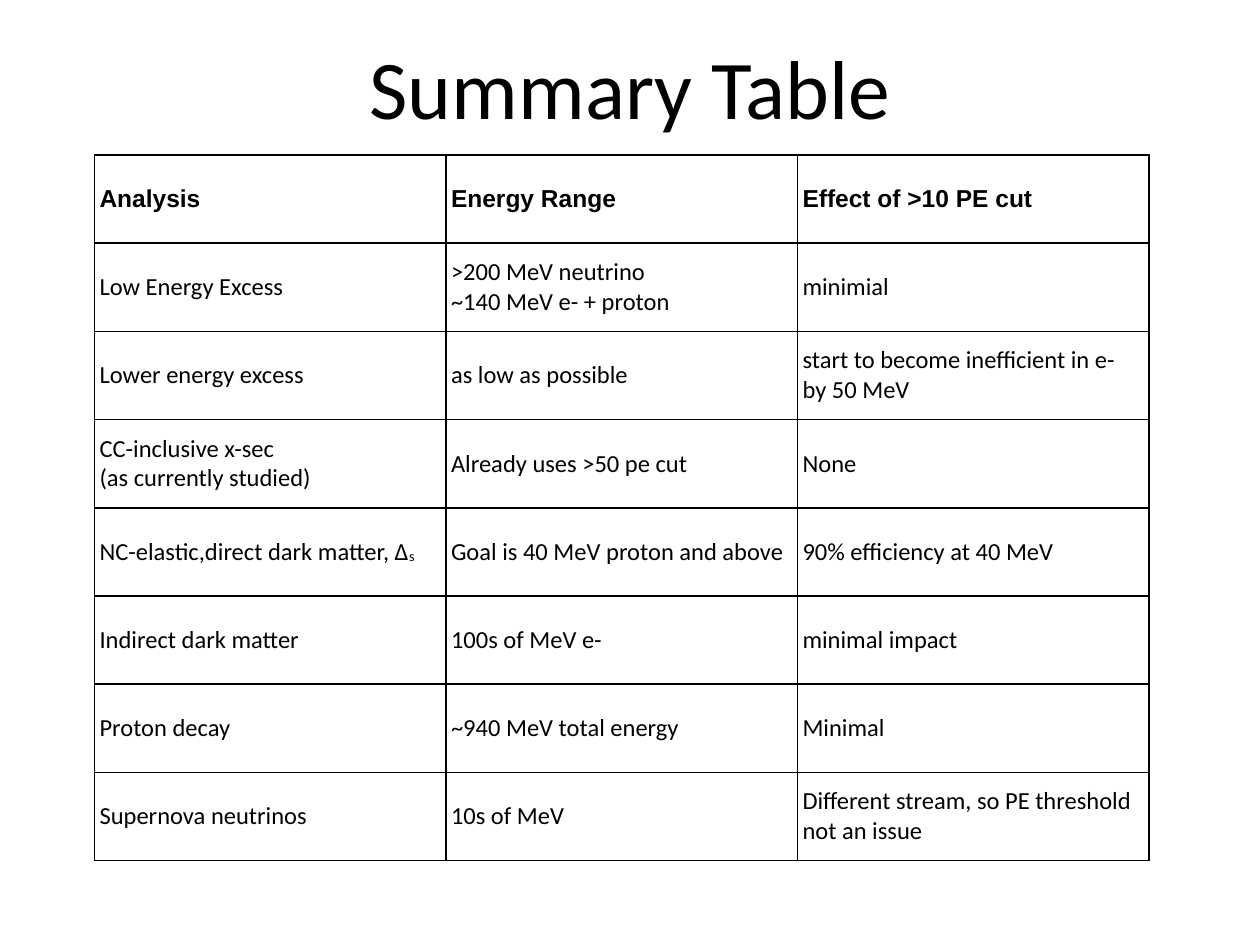
from lxml import etree
from pptx import Presentation
from pptx import util as u
from pptx.dml.color import RGBColor
from pptx.enum import text
from pptx.oxml import ns

BLACK = RGBColor(0x00, 0x00, 0x00)

HEADINGS = ("Analysis", "Energy Range", "Effect of >10 PE cut")
ANALYSES = (
    ("Low Energy Excess", ">200 MeV neutrino\n~140 MeV e- + proton", "minimial"),
    ("Lower energy excess", "as low as possible",
     "start to become inefficient in e- by 50 MeV"),
    ("CC-inclusive x-sec\n(as currently studied)", "Already uses >50 pe cut", "None"),
    ("NC-elastic,direct dark matter, ∆", "Goal is 40 MeV proton and above",
     "90% efficiency at 40 MeV"),
    ("Indirect dark matter", "100s of MeV e-", "minimal impact"),
    ("Proton decay", "~940 MeV total energy", "Minimal"),
    ("Supernova neutrinos", "10s of MeV",
     "Different stream, so PE threshold not an issue"),
)
DARK_MATTER_ROW = 4


class SummarySlide:
    """Holds the style and the slide, and adds each kind of element."""

    heading_font = "Arial"
    body_font = "Calibri"
    title_size = u.Pt(47.7)
    cell_size = u.Pt(14)
    cell_margin = u.Inches(0.04)
    border_width = u.Pt(1)

    def __init__(self, presentation):
        self.slide = presentation.slides.add_slide(presentation.slide_layouts[5])

    def style_run(self, run, font_name, size, bold=False):
        run.font.name = font_name
        run.font.size = size
        run.font.bold = bold
        run.font.color.rgb = BLACK

    def add_title(self, wording, left, top, width, height):
        title = self.slide.shapes.title
        title.left, title.top = u.Inches(left), u.Inches(top)
        title.width, title.height = u.Inches(width), u.Inches(height)
        frame = title.text_frame
        frame.text = wording
        frame.auto_size = text.MSO_AUTO_SIZE.NONE
        frame.vertical_anchor = text.MSO_ANCHOR.MIDDLE
        frame.margin_left = frame.margin_right = u.Inches(0.1)
        frame.margin_top = frame.margin_bottom = u.Inches(0.1)
        heading = frame.paragraphs[0]
        heading.alignment = text.PP_ALIGN.CENTER
        self.style_run(heading.runs[0], self.body_font, self.title_size)

    def add_borders(self, cell):
        properties = cell._tc.get_or_add_tcPr()
        for side in ("lnL", "lnR", "lnT", "lnB"):
            line = etree.SubElement(properties, ns.qn(f"a:{side}"),
                                    w=str(self.border_width))
            fill = etree.SubElement(line, ns.qn("a:solidFill"))
            etree.SubElement(fill, ns.qn("a:srgbClr"), val=str(BLACK))

    def fill_cell(self, cell, wording, heading):
        self.add_borders(cell)
        cell.fill.background()
        cell.vertical_anchor = text.MSO_ANCHOR.MIDDLE
        cell.margin_left = cell.margin_right = self.cell_margin
        cell.margin_top = cell.margin_bottom = self.cell_margin
        paragraph = cell.text_frame.paragraphs[0]
        paragraph.text = wording
        font_name = self.heading_font if heading else self.body_font
        for run in paragraph.runs:
            self.style_run(run, font_name, self.cell_size, bold=heading)
        for line_break in paragraph._p.findall(ns.qn("a:br")):
            etree.SubElement(line_break, ns.qn("a:rPr"),
                             sz=str(self.cell_size.centipoints))

    def add_subscript(self, cell, wording):
        subscript = cell.text_frame.paragraphs[0].add_run()
        subscript.text = wording
        self.style_run(subscript, self.body_font, self.cell_size)
        subscript.font._element.set("baseline", "-6000")

    def add_table(self, rows, left, top, column_width, row_height):
        columns = len(rows[0])
        table = self.slide.shapes.add_table(
            len(rows), columns, u.Inches(left), u.Inches(top),
            u.Inches(column_width * columns), u.Inches(row_height * len(rows))).table
        table.first_row = table.horz_banding = False
        for r, row in enumerate(rows):
            for c, wording in enumerate(row):
                self.fill_cell(table.cell(r, c), wording, heading=r == 0)
        return table


def main():
    presentation = Presentation()
    presentation.slide_width = u.Inches(10)
    presentation.slide_height = u.Inches(7.5)
    summary = SummarySlide(presentation)
    summary.add_title("Summary Table", 0.73, 0.2, 8.54, 0.96)
    analyses = summary.add_table((HEADINGS, *ANALYSES), 0.75, 1.23, 2.79, 0.7)
    summary.add_subscript(analyses.cell(DARK_MATTER_ROW, 0), "s")
    presentation.save("out.pptx")


if __name__ == "__main__":
    main()
